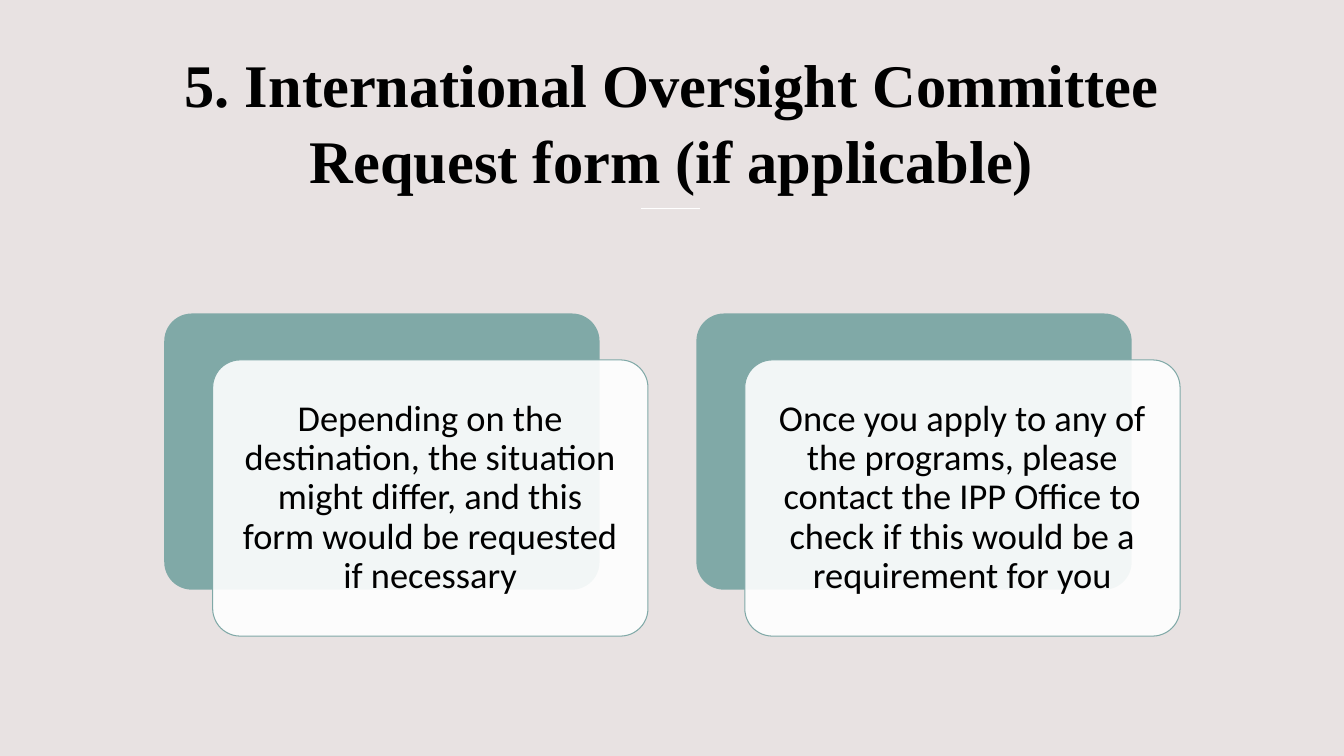
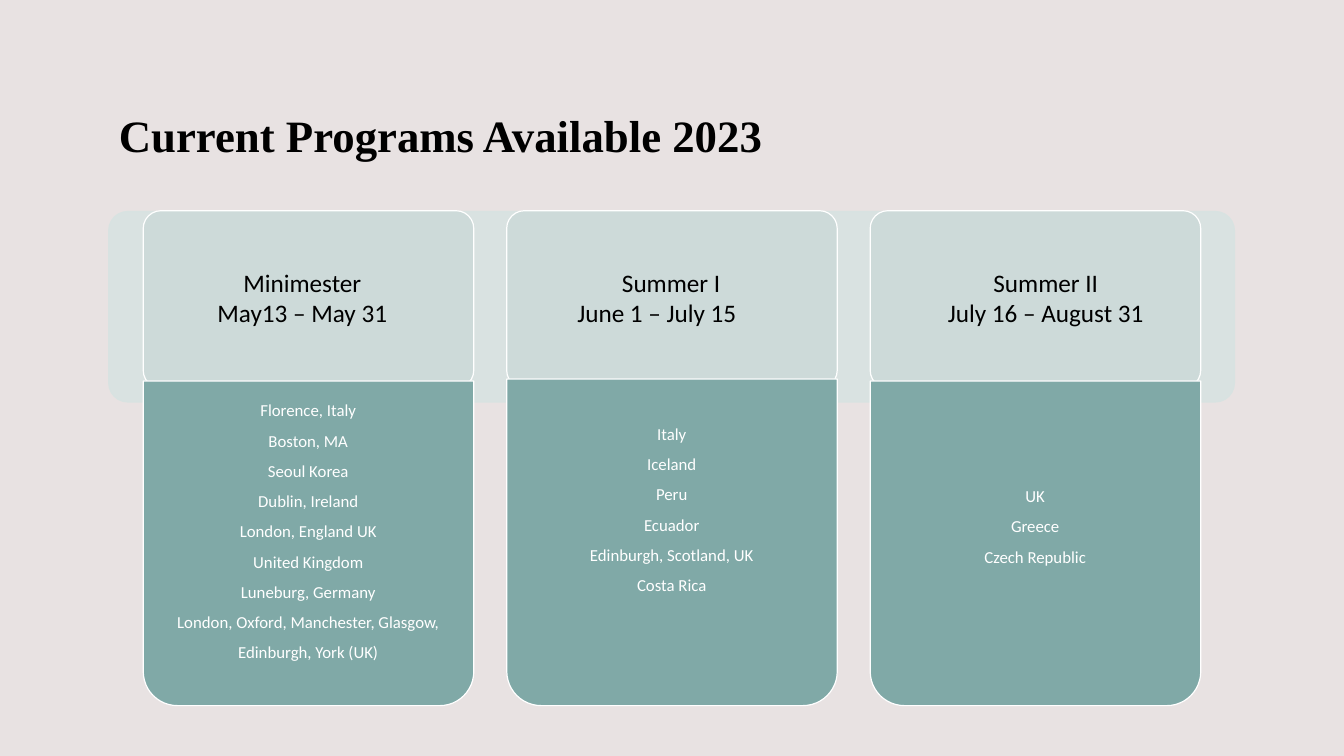
"""Build two study-abroad slides: the committee request form and the 2023 programs."""
from lxml import etree
from pptx import Presentation
from pptx import util as u
from pptx.dml.color import RGBColor
from pptx.enum import shapes, text
from pptx.oxml.ns import qn

COLORS = {
    "background": "E8E2E2",
    "teal": "80A9A7",
    "band": "D8E2E1",
    "header": "CDDAD9",
    "white": "FFFFFF",
    "black": "000000",
}
SHAPE = shapes.MSO_SHAPE
ALIGN = text.PP_ALIGN
ANCHOR = text.MSO_ANCHOR


def add_panel(page, kind, place, fill, line=None, width=0.85, alpha=None, corner=0.1):
    """Add a filled panel at a place given in centimetres."""
    panel = page.shapes.add_shape(kind, *[u.Cm(length) for length in place])
    panel.shadow.inherit = False
    panel.adjustments[0] = corner
    panel.fill.solid()
    panel.fill.fore_color.rgb = RGBColor.from_string(COLORS[fill])
    if line:
        panel.line.color.rgb = RGBColor.from_string(COLORS[line])
        panel.line.width = u.Pt(width)
    else:
        panel.line.fill.background()
    if alpha:
        for color in panel.fill._xPr.iterchildren(qn("a:solidFill")):
            etree.SubElement(color[0], qn("a:alpha")).set("val", str(alpha * 1000))
    return panel


def write(box, lines, size, color="black", font="Calibri", align=ALIGN.CENTER,
          anchor=ANCHOR.TOP, spacing=1.0, bold=False, inset=None):
    """Fill a box with one paragraph per line in a single style."""
    frame = box.text_frame
    frame.text = "\n".join(lines)
    frame.word_wrap = True
    frame.auto_size = text.MSO_AUTO_SIZE.NONE
    frame.vertical_anchor = anchor
    if inset is not None:
        frame.margin_left = frame.margin_right = u.Cm(inset)
        frame.margin_top = frame.margin_bottom = u.Cm(inset)
    for para in frame.paragraphs:
        para.alignment = align
        para.line_spacing = spacing
        for span in para.runs:
            span.font.name = font
            span.font.size = u.Pt(size)
            span.font.bold = bold
            span.font.color.rgb = RGBColor.from_string(COLORS[color])


deck = Presentation()
deck.slide_width, deck.slide_height = u.Cm(33.87), u.Cm(19.05)
backdrop = deck.slide_master.background.fill
backdrop.solid()
backdrop.fore_color.rgb = RGBColor.from_string(COLORS["background"])

titles = [
    ("5. International Oversight Committee Request form (if applicable)",
     3.86, 43.2, ALIGN.CENTER, ANCHOR.MIDDLE),
    ("Current Programs Available 2023", 3.1, 32, ALIGN.LEFT, ANCHOR.BOTTOM),
]
pages = []
for wording, height, size, align, anchor in titles:
    page = deck.slides.add_slide(deck.slide_layouts[5])
    title = page.shapes.title
    title.left, title.top = u.Cm(2.74), u.Cm(1.09)
    title.width, title.height = u.Cm(28.37), u.Cm(height)
    write(title, [wording], size, font="Times New Roman", align=align,
          anchor=anchor, spacing=1.05, bold=True)
    pages.append(page)
form_page, programs_page = pages

rule = form_page.shapes.add_connector(
    shapes.MSO_CONNECTOR.STRAIGHT, u.Cm(16.15), u.Cm(5.26), u.Cm(17.65), u.Cm(5.26))
rule.line.color.rgb = RGBColor.from_string(COLORS["white"])
rule.line.width = u.Pt(1)
etree.SubElement(rule._element.spPr, qn("a:effectLst"))

notices = [
    "Depending on the destination, the situation might differ, "
    "and this form would be requested if necessary",
    "Once you apply to any of the programs, please contact the IPP Office "
    "to check if this would be a requirement for you",
]
for index, notice in enumerate(notices):
    left = 4.14 + 13.41 * index
    add_panel(form_page, SHAPE.ROUNDED_RECTANGLE, (left, 7.9, 10.97, 6.96), "teal")
    card = add_panel(form_page, SHAPE.ROUNDED_RECTANGLE,
                     (left + 1.22, 9.07, 10.97, 6.96), "white", "teal", 0.75, alpha=90)
    write(card, [notice], 26, anchor=ANCHOR.MIDDLE, spacing=0.9, inset=0.48)

add_panel(programs_page, SHAPE.ROUNDED_RECTANGLE, (2.74, 5.33, 28.37, 4.8),
          "band", "band", alpha=90)
terms = [
    (["Minimester", "May13 – May 31"], 4.65, 5.94, ALIGN.CENTER, 9.6, 9.6,
     ["Florence, Italy", "Boston, MA", "Seoul Korea", "Dublin, Ireland",
      "London, England UK", "United Kingdom", "Luneburg, Germany",
      "London, Oxford, Manchester, Glasgow, Edinburgh, York (UK)"]),
    (["Summer I", "June 1 – July 15"], 14.3, 5.23, ALIGN.LEFT, 9.55, 10.19,
     ["Italy", "Iceland", "Peru", "Ecuador", "Edinburgh, Scotland, UK", "Costa Rica"]),
    (["Summer II", "July 16 – August 31"], 23.09, 6.53, ALIGN.CENTER, 9.6, 11.76,
     ["UK", "Greece", "Czech Republic"]),
]
bottom = 17.78
for index, (heading, heading_left, heading_width, date_align,
            body_top, list_top, places) in enumerate(terms):
    left = 3.61 + 9.16 * index
    add_panel(programs_page, SHAPE.ROUNDED_RECTANGLE, (left, 5.31, 8.33, 4.47),
              "header", "white")
    body = add_panel(programs_page, SHAPE.ROUND_2_SAME_RECTANGLE,
                     (left, body_top, 8.33, bottom - body_top),
                     "teal", "white", corner=0.105)
    body.rotation = 180
    place_list = programs_page.shapes.add_textbox(
        u.Cm(left + 0.25), u.Cm(list_top), u.Cm(7.82), u.Cm(bottom - 0.25 - list_top))
    write(place_list, places, 12, "white", spacing=1.5, inset=0.23)
    label = programs_page.shapes.add_textbox(
        u.Cm(heading_left), u.Cm(6.6), u.Cm(heading_width), u.Cm(1.8))
    write(label, heading, 18)
    label.text_frame.paragraphs[1].alignment = date_align

deck.save("out.pptx")
